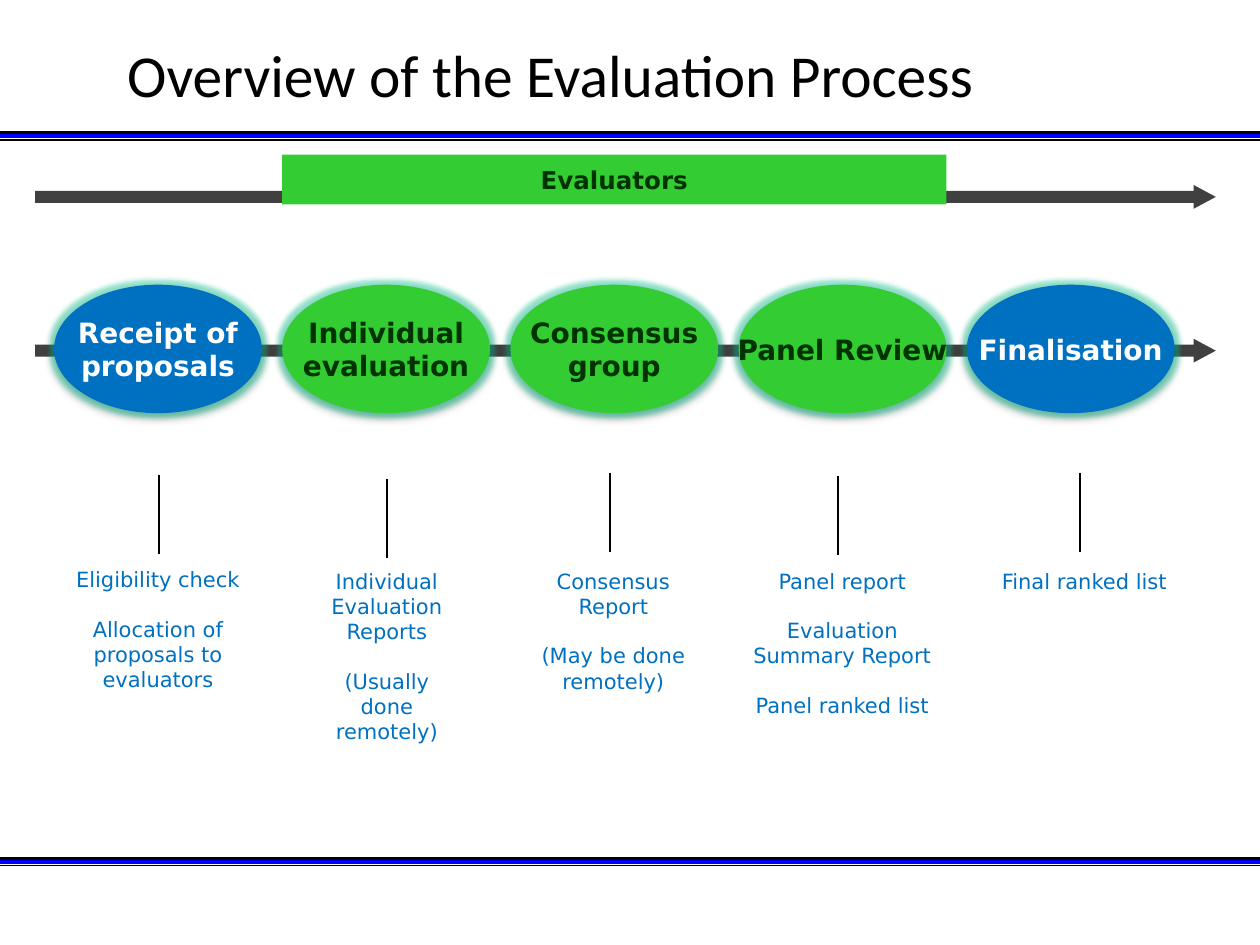
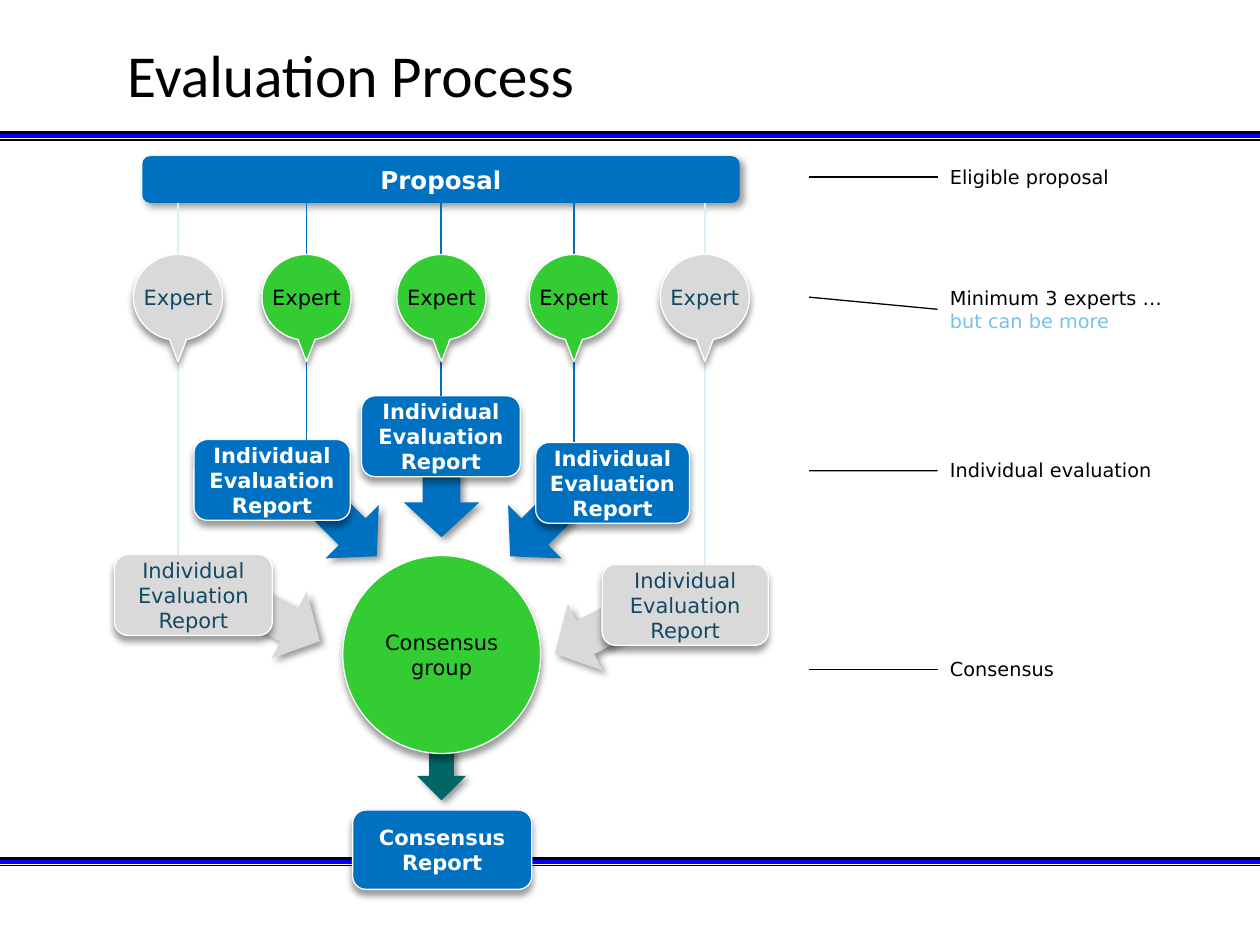
from dataclasses import dataclass

from lxml.etree import SubElement
from pptx import Presentation
from pptx.dml.color import RGBColor
from pptx.enum.shapes import MSO_CONNECTOR, MSO_SHAPE
from pptx.enum.text import MSO_ANCHOR, PP_ALIGN
from pptx.oxml.ns import qn
from pptx.util import Cm, Pt


@dataclass(frozen=True)
class Theme:
    """Colours, fonts and type sizes of the deck."""

    head_font: str = "Calibri"
    text_font: str = "DejaVu Sans"
    black: str = "000000"
    white: str = "FFFFFF"
    blue: str = "0070C0"
    band: str = "0000FF"
    green: str = "33CC33"
    forest: str = "003300"
    teal: str = "006666"
    grey: str = "D9D9D9"
    dark: str = "404040"
    navy: str = "114864"
    sky: str = "77C2E8"
    pale: str = "DBEFF9"
    glow: str = "10CF9B"
    title: int = 34
    stage: int = 16
    bar: int = 14
    body: int = 12
    label: int = 11


T = Theme()
STEP = 4.6
STAGE_W = 4.19

STAGES = [
    ("Receipt of\nproposals", T.blue, T.white),
    ("Individual\nevaluation", T.green, T.forest),
    ("Consensus\ngroup", T.green, T.forest),
    ("Panel Review", T.green, T.forest),
    ("Finalisation", T.blue, T.white),
]

# left, top, width, blocks, then x and top of the tick above
NOTES = [
    (1.09, 11.3, 4.19, ["Eligibility check", "Allocation of proposals to evaluators"], 3.2, 9.58),
    (6.3, 11.33, 3, ["Individual\nEvaluation\nReports", "(Usually done remotely)"], 7.8, 9.65),
    (10.46, 11.33, 3.81, ["Consensus\nReport", "(May be done\nremotely)"], 12.29, 9.53),
    (14.63, 11.33, 4.7, ["Panel report", "Evaluation Summary Report", "Panel ranked list"], 16.89, 9.6),
    (19.51, 11.33, 4.7, ["Final ranked list"], 21.77, 9.53),
]

# expert left, report left, top and width, arrow left, top and turn, core member
EXPERTS = [
    (2.69, 2.31, 11.18, 3.18, 5.13, 11.84, 27.8, False),
    (5.28, 3.91, 8.86, 3.15, 6.4, 9.96, 45, True),
    (8, 7.29, 7.98, 3.2, 8.2, 9.37, 90, True),
    (10.67, 10.8, 8.92, 3.1, 10.08, 9.96, 135, True),
    (13.31, 12.14, 11.38, 3.35, 11.1, 12.09, 152.2, False),
]

# top, height, far end of the line, runs
LABELS = [
    (3.2, 0.74, 3.57, [("Eligible proposal", T.black)]),
    (5.64, 1.19, 5.99, [("Minimum 3 experts … ", T.black), ("but can be more", T.sky)]),
    (9.12, 0.74, 9.49, [("Individual evaluation", T.black)]),
    (13.13, 0.74, 13.5, [("Consensus", T.black)]),
]


def paint(font, size, color, bold=False, name=T.text_font):
    """Set the face, size and colour of a font."""
    font.name, font.size, font.bold = name, Pt(size), bold
    font.color.rgb = RGBColor.from_string(color)


def write(shape, blocks, size, color, bold=False, wrap=False):
    """Write centred blocks of lines with a gap of one line between blocks."""
    frame = shape.text_frame
    frame.word_wrap = wrap
    frame.text = "\n".join(blocks)
    starts, row = set(), 0
    for block in blocks:
        starts.add(row)
        row += block.count("\n") + 1
    for n, para in enumerate(frame.paragraphs):
        para.alignment = PP_ALIGN.CENTER
        paint(para.font, size, color, bold)
        if n and n in starts:
            para.space_before = Pt(size * 1.16)
    return frame


def tint(parent, kind, color, alpha, **attrs):
    """Add one effect with its colour and opacity."""
    node = SubElement(parent, qn(f"a:{kind}"), {k: str(v) for k, v in attrs.items()})
    tone = SubElement(node, qn("a:srgbClr"), val=color)
    SubElement(tone, qn("a:alpha"), val=str(alpha * 1000))


def shade(shape, alpha=40, blur=4, dist=3, turn=90, halo=False):
    """Give a shape a soft shadow and, if asked, a halo."""
    props = shape.element.spPr.find(qn("a:effectLst"))
    if halo:
        tint(props, "glow", T.glow, 40, rad=Pt(5))
    tint(props, "outerShdw", T.black, alpha, blurRad=Pt(blur), dist=Pt(dist),
         dir=turn * 60000, rotWithShape=0)


def form(slide, kind, box, fill, edge=None):
    """Add a flat preset shape; box is left, top, width and height in cm."""
    shape = slide.shapes.add_shape(kind, *map(Cm, box))
    shape.shadow.inherit = False
    shape.fill.solid()
    shape.fill.fore_color.rgb = RGBColor.from_string(fill)
    if edge:
        shape.line.color.rgb = RGBColor.from_string(edge)
        shape.line.width = Pt(0.75)
    else:
        shape.line.fill.background()
    shape.text_frame.vertical_anchor = MSO_ANCHOR.MIDDLE
    return shape


def card(slide, kind, box, fill):
    """Add a white-edged shape with a shadow below it."""
    shape = form(slide, kind, box, fill, T.white)
    shade(shape)
    return shape


def arrow(slide, box, turn, fill):
    """Add a turned block arrow with a shadow."""
    shape = form(slide, MSO_SHAPE.RIGHT_ARROW, box, fill)
    shape.rotation = turn
    shade(shape, turn=45)


def rule(slide, ends, color, width):
    """Add a plain straight line; ends is x1, y1, x2 and y2 in cm."""
    line = slide.shapes.add_connector(MSO_CONNECTOR.STRAIGHT, *map(Cm, ends))
    line.line.color.rgb = RGBColor.from_string(color)
    line.line.width = Pt(width)
    SubElement(line.element.spPr, qn("a:effectLst"))
    return line


def bands(slide, layout):
    """Draw the two triple bands and hand them to the layout."""
    for n, top in enumerate((2.69, 17.32)):
        rows = ((0, T.black, 2.25), (0.13, T.black, 1), (0.05, T.band, 2.25))
        for k, (gap, color, width) in enumerate(rows):
            line = rule(slide, (0, top + gap, 25.4, top + gap), color, width)
            line.element.xpath(".//p:cNvPr")[0].set("id", str(20 + 3 * n + k))
            layout.shapes.element.append(line.element)


def start(deck, layout, title):
    """Add a slide with its title."""
    slide = deck.slides.add_slide(layout)
    frame = slide.shapes.title.text_frame
    frame.text = title
    frame.vertical_anchor = MSO_ANCHOR.MIDDLE
    para = frame.paragraphs[0]
    para.alignment = PP_ALIGN.LEFT
    para.line_spacing = 0.9
    paint(para.font, T.title, T.black, name=T.head_font)
    return slide


def track(slide, top):
    """Add a long time arrow across the slide."""
    shape = form(slide, MSO_SHAPE.RIGHT_ARROW, (0.71, top, 23.8, 0.48), T.dark)
    shape.adjustments[1] = 0.93


def stage(slide, left, text, fill, ink):
    """Add one oval step of the process."""
    oval = form(slide, MSO_SHAPE.OVAL, (left, 5.74, STAGE_W, 2.59), fill)
    shade(oval, 35, 3.1, 1.8, halo=True)
    frame = write(oval, [text], T.stage, ink, True)
    frame.margin_left = frame.margin_right = 0
    frame.margin_top = frame.margin_bottom = 0


def note(slide, left, top, width, blocks, x, y):
    """Add a tick and the outcomes below it."""
    rule(slide, (x, y, x, y + 1.59), T.black, 1)
    box = slide.shapes.add_textbox(*map(Cm, (left, top, width, 3)))
    write(box, blocks, T.body, T.blue, wrap=True)


def label(slide, top, height, far, runs):
    """Add a side label with the line that leads to it."""
    box = slide.shapes.add_textbox(*map(Cm, (18.9, top, 4.8, height)))
    box.text_frame.word_wrap = True
    para = box.text_frame.paragraphs[0]
    for text, color in runs:
        run = para.add_run()
        run.text = text
        paint(run.font, T.label, color)
    line = rule(slide, (18.9, top + height / 2, 16.31, far), T.black, 0.75)
    line.begin_connect(box, 1)


def branch(slide, source, row):
    """Add an expert, the report below and the arrow to the group."""
    left, side, top, width, ax, ay, turn, core = row
    fill, ink = (T.blue, T.white) if core else (T.grey, T.navy)
    arrow(slide, (ax, ay, 1.4, 1.52), turn, fill)
    report = card(slide, MSO_SHAPE.ROUNDED_RECTANGLE, (side, top, width, 1.63), fill)
    write(report, ["Individual\nEvaluation\nReport"], T.body, ink, core)
    mid = left + 0.9
    line = rule(slide, (mid, 4.09, mid, top), T.blue if core else T.pale, 0.75)
    if turn == 90:
        line.begin_connect(source, 2)
        line.end_connect(report, 0)
    pin = card(slide, MSO_SHAPE.OVAL_CALLOUT, (left, 5.13, 1.8, 1.73),
               T.green if core else T.grey)
    pin.adjustments[0], pin.adjustments[1] = 0, 0.75
    write(pin, ["Expert"], T.body, T.black if core else T.navy)


def overview(slide):
    """Fill the slide with the five steps and their outcomes."""
    for top in (3.73, 6.83):
        track(slide, top)
    for n, (text, fill, ink) in enumerate(STAGES):
        stage(slide, 1.09 + n * STEP, text, fill, ink)
    bar = form(slide, MSO_SHAPE.RECTANGLE, (5.69, 3.12, 2 * STEP + STAGE_W, 1), T.green)
    write(bar, ["Evaluators"], T.bar, T.forest, True)
    for row in NOTES:
        note(slide, *row)


def process(slide):
    """Fill the slide with the way from proposal to consensus."""
    source = form(slide, MSO_SHAPE.ROUNDED_RECTANGLE, (2.87, 3.15, 12.04, 0.94), T.blue)
    shade(source, turn=45)
    write(source, ["Proposal"], T.bar, T.white, True)
    for row in EXPERTS:
        branch(slide, source, row)
    arrow(slide, (8.2, 14.94, 1.4, 0.99), 90, T.teal)
    group = card(slide, MSO_SHAPE.OVAL, (6.91, 11.2, 3.99, 3.99), T.green)
    write(group, ["Consensus\ngroup"], T.body, T.black)
    report = card(slide, MSO_SHAPE.ROUNDED_RECTANGLE, (7.11, 16.33, 3.61, 1.6), T.blue)
    write(report, ["Consensus\nReport"], T.body, T.white, True)
    for row in LABELS:
        label(slide, *row)


def main():
    """Build and save the deck."""
    deck = Presentation()
    deck.slide_width, deck.slide_height = Cm(25.4), Cm(19.05)
    layout = deck.slide_layouts[5]
    head = layout.placeholders[0]
    head.left, head.top, head.width, head.height = map(Cm, (2.31, 0.76, 21.9, 1.63))
    first = start(deck, layout, "Overview of the Evaluation Process")
    bands(first, layout)
    overview(first)
    process(start(deck, layout, "Evaluation Process"))
    deck.save("out.pptx")


if __name__ == "__main__":
    main()
